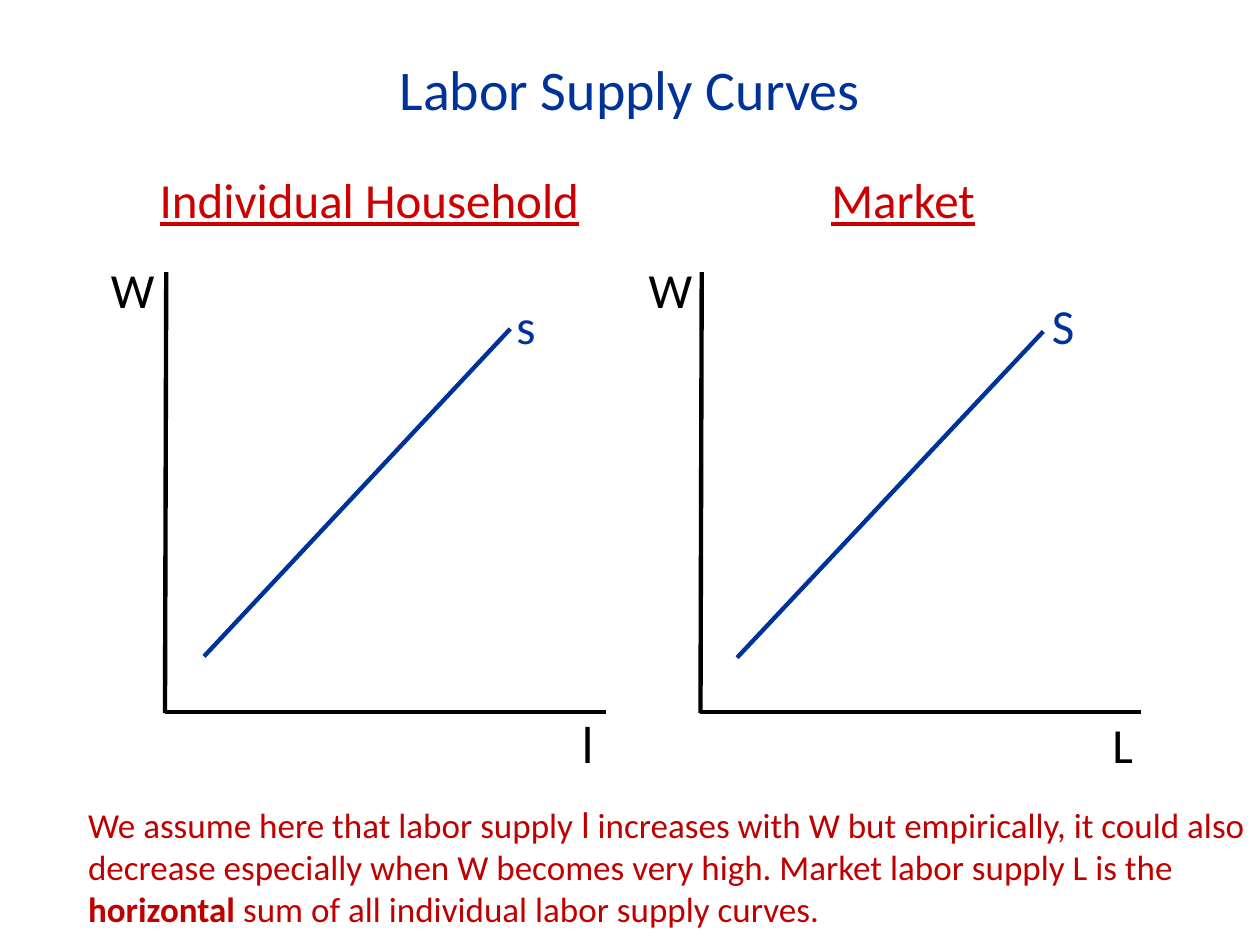
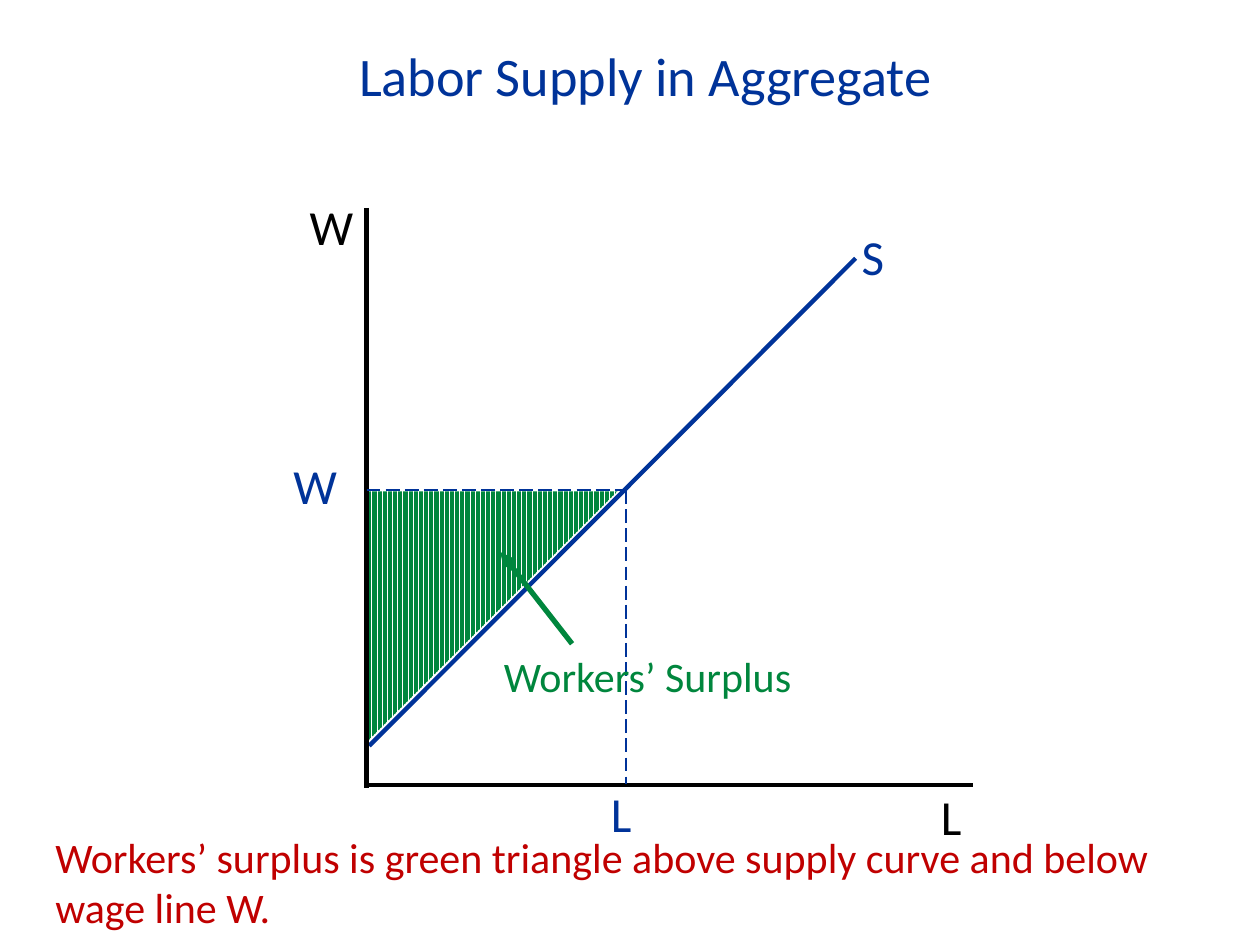
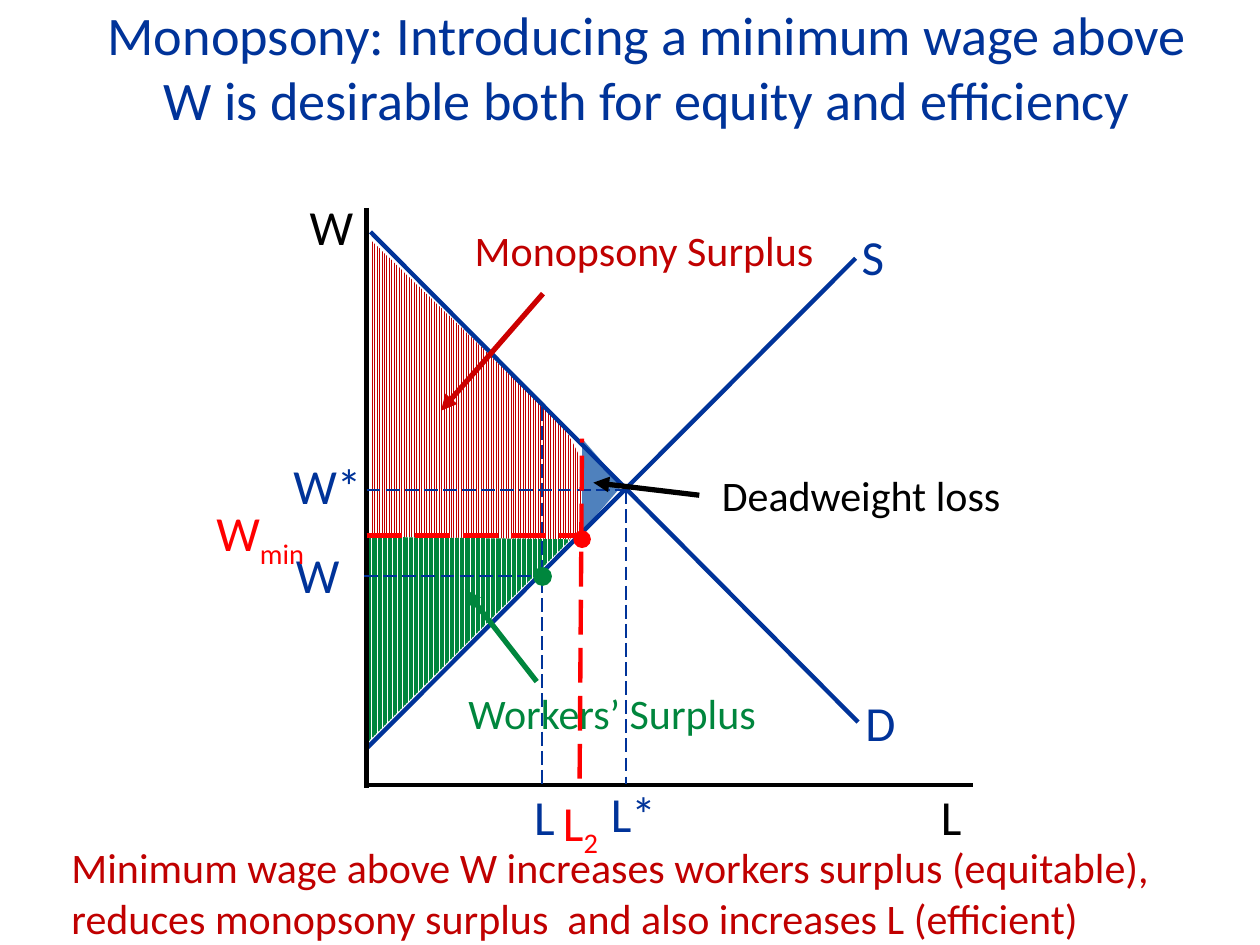
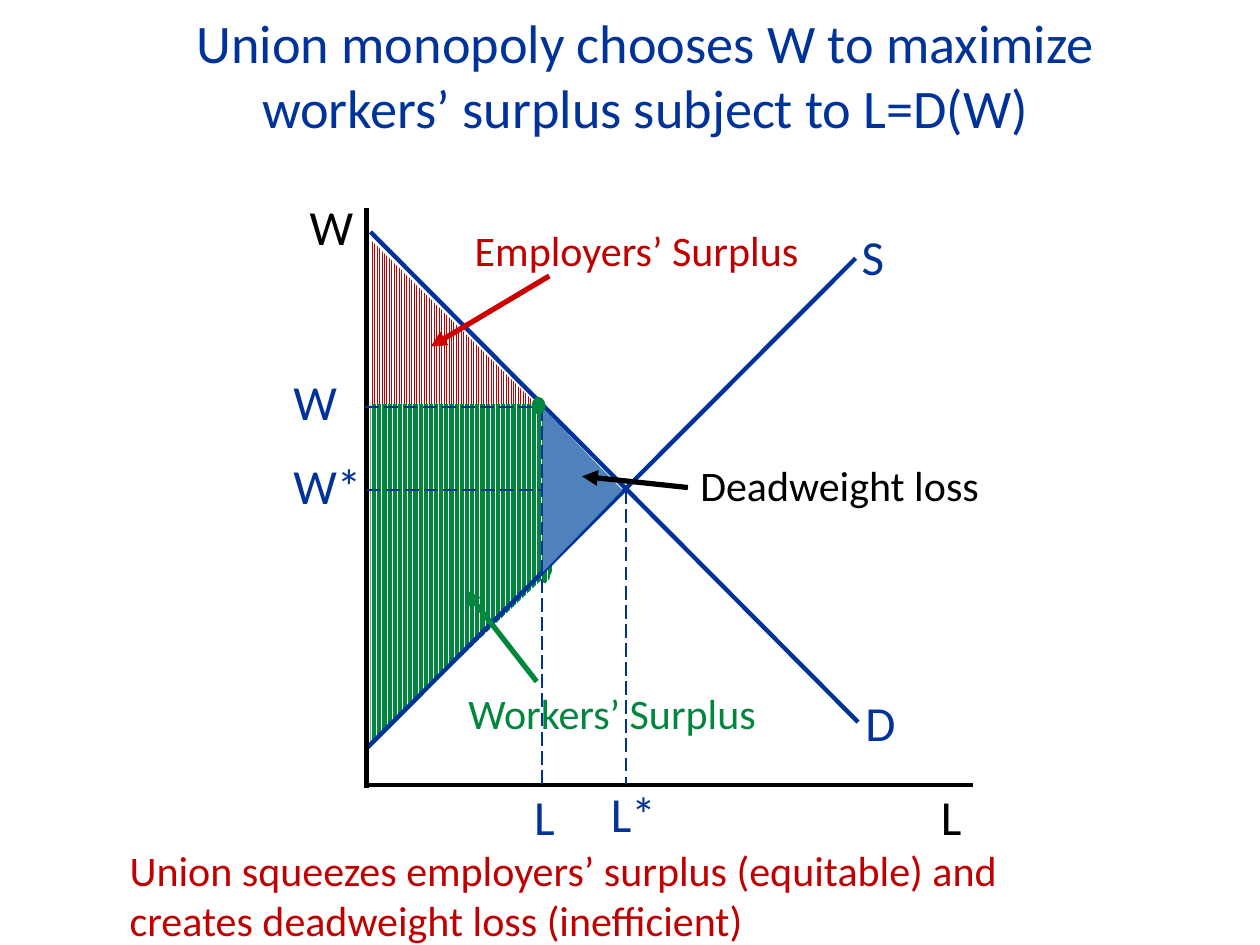
from pptx import Presentation
from pptx import util as u
from pptx.dml.color import RGBColor
from pptx.enum import dml, shapes, text
from pptx.oxml.ns import qn
from lxml import etree

BLACK, WHITE, BLUE = "000000", "FFFFFF", "003399"
RED, NOTE_RED, BRIGHT_RED = "CC0000", "C00000", "FF0000"
GREEN, LOSS_BLUE = "00863D", "4F81BD"
DARK, LIGHT = dml.MSO_PATTERN.DARK_VERTICAL, dml.MSO_PATTERN.LIGHT_VERTICAL

TEXT_STYLES = {
    "title": dict(size=31, color=BLUE, centred=True),
    "first title": dict(size=32, color=BLUE, centred=True),
    "heading": dict(size=28, color=RED, underline=True),
    "axis": dict(size=28, color=BLACK),
    "wage axis": dict(size=28, color=BLACK, spacing=0.8),
    "curve": dict(size=28, color=BLUE),
    "value": dict(size=28, color=BLUE, spacing=0.8),
    "minimum": dict(size=28, color=BRIGHT_RED, spacing=0.8),
    "note": dict(size=24, color=NOTE_RED),
    "small note": dict(size=20, color=NOTE_RED, wrap=False),
    "firm surplus": dict(size=24, color=NOTE_RED, wrap=False),
    "worker surplus": dict(size=24, color=GREEN),
    "loss": dict(size=24, color=BLACK, wrap=False),
}
LINE_STYLES = {
    "axis": dict(color=BLACK, width=2.5),
    "curve": dict(color=BLUE, width=2.5),
    "guide": dict(color=BLUE, width=1, dashed=True),
    "minimum": dict(color=BRIGHT_RED, width=2.5, dashed=True),
    "red arrow": dict(color=RED, width=3, arrow=True),
    "green arrow": dict(color=GREEN, width=3, arrow=True),
    "black arrow": dict(color=BLACK, width=3, arrow=True),
}
FILLS = {"workers": (GREEN, DARK), "firm": (NOTE_RED, LIGHT), "loss": (LOSS_BLUE, None),
         "red": (BRIGHT_RED, None), "green": (GREEN, None)}

PANELS = [
    dict(origin=94.3, quantity=[("l", "lato")], quantity_x=325.4, wage_x=56.2),
    dict(origin=400.3, quantity="L", quantity_x=628.6, wage_x=363.6),
]


def panel(origin, quantity, quantity_x, wage_x):
    return ("group", [
        ("line", "axis", (origin + 0.7, 155.5, origin, 407.5)),
        ("line", "axis", (origin, 406.8, origin + 252, 406.8)),
        ("label", "axis", (quantity_x, 404.6, 36.7, 41), [quantity]),
        ("label", "wage axis", (wage_x, 151.2, 32.4, 35.3), ["W"]),
    ])


SUPPLY = [("line", "curve", (209.5, 427.7, 488.9, 147.6))]
AXES = [
    ("line", "axis", (209.5, 118.8, 209.5, 450)),
    ("line", "axis", (210.2, 448.6, 555.8, 448.6)),
    ("label", "axis", (530.6, 445.7, 28.8, 36), ["L"]),
    ("label", "wage axis", (169.9, 115.2, 41.8, 34.6), ["W"]),
    ("label", "curve", (485.3, 126, 50.4, 41), ["S"]),
]


def wage(label, x, y):
    return ("label", "value", (x, y, 64.1, 35.3), [label])


def labor(label, x, y, style="value"):
    return ("label", style, (x, y, 54, 35.3), [label])


def equilibrium(mark=""):
    return [
        ("line", "guide", (209.5, 280.1, 357.1, 280.1)),
        ("line", "guide", (357.8, 280.1, 357.8, 447.8)),
        wage("W" + mark, 160.6, 263.5),
        labor("L" + mark, 342, 450.7),
    ]


def workers_surplus(x, y):
    return [
        ("label", "worker surplus", (x, y, 193, 36), ["Workers’ Surplus"]),
        ("line", "green arrow", (x + 46.1, y, x + 5.1, y - 52.5)),
    ]


MARKET = [
    ("label", "curve", (487.4, 392.4, 42.5, 41), ["D"]),
    *SUPPLY, *AXES,
    ("line", "curve", (211.7, 132.5, 490.3, 412.6)),
    *equilibrium("*"),
    *workers_surplus(260.6, 389.5),
]
CHOSEN_LABOR = [
    ("line", "guide", (309.6, 232.6, 309.6, 447.8)),
    labor("L", 298.1, 452.2),
]

SLIDES = [
    [
        ("label", "first title", (50.4, 27.4, 619.2, 46.1), ["Labor Supply Curves"]),
        *[panel(**p) for p in PANELS],
        ("label", "heading", (84.2, 93.6, 259.2, 74.9), ["Individual Household"]),
        ("label", "heading", (468, 93.6, 120.2, 41), ["Market"]),
        ("line", "curve", (421.2, 375.8, 596.2, 189.4)),
        ("label", "curve", (594, 165.6, 40.3, 41), ["S"]),
        ("line", "curve", (116.6, 375.1, 291.6, 187.9)),
        ("label", "curve", (288, 165.6, 40.3, 41), ["s"]),
        ("label", "small note", (43.2, 455.8, 682.6, 79.9), [
            [("We assume here that labor supply ", ""), ("l", "lato"),
             (" increases with W but empirically, it could also", "")],
            "decrease especially when W becomes very high. Market labor supply L is the",
            [("horizontal ", "bold"), ("sum of all individual labor supply curves.", "")],
        ]),
    ],
    [
        ("preset", "workers", "RIGHT_TRIANGLE", (210.2, 280.8, 142.6, 142.6), 90),
        ("line", "curve", (211, 426.2, 488.9, 147.6)),
        *AXES, *equilibrium(),
        ("label", "title", (59, 20.2, 619.2, 44.6), ["Labor Supply in Aggregate"]),
        ("label", "note", (24.5, 471.6, 677.5, 65.5),
         ["Workers’ surplus is green triangle above supply curve and below wage line W."]),
        *workers_surplus(280.8, 367.9)[::-1],
    ],
    [
        ("area", "firm", [(212.4, 340.6), (212.4, 137.5), (323.3, 244.8),
                          (338.4, 276.5, 349.9, 288, 331.2, 303.8),
                          (313.2, 319.7, 227.5, 373, 212.4, 340.6)]),
        ("area", "loss", [(332.6, 303.8), (332.6, 250.6), (355.7, 277.2)]),
        ("area", "workers", [(208.1, 306.7), (326.2, 308.2), (211, 423.4)]),
        *MARKET,
        ("line", "red arrow", (310.3, 167.8, 252, 234.7)),
        ("label", "firm surplus", (264.2, 124.6, 209.5, 36), ["Monopsony Surplus"]),
        ("label", "title", (38.9, -2.9, 661, 82.1),
         ["Monopsony: Introducing a minimum wage above W is desirable both for equity and efficiency"]),
        ("label", "note", (33.8, 477.4, 717.8, 65.5),
         ["Minimum wage above W increases workers surplus (equitable),",
          "reduces monopsony surplus  and also increases L (efficient)"]),
        *CHOSEN_LABOR,
        ("line", "guide", (208.1, 329, 309.6, 329)),
        wage("W", 162, 313.9),
        ("label", "loss", (405.4, 265, 175, 58.3), ["Deadweight loss"]),
        ("line", "black arrow", (399.6, 283, 339.1, 275.8)),
        ("line", "minimum", (209.5, 306, 332.6, 306)),
        ("label", "minimum", (116.6, 287.3, 96.5, 35.3), [[("W", ""), ("min", "sub")]]),
        ("line", "minimum", (331.2, 445, 332.6, 250.6)),
        labor([("L", ""), ("2", "sub")], 314.6, 452.9, "minimum"),
        ("preset", "red", "OVAL", (327.6, 303.1, 10.1, 10.1), 0),
        ("preset", "green", "OVAL", (304.6, 324, 10.8, 10.8), 0),
    ],
    [
        ("area", "workers", [(211.7, 424.8), (211.7, 232.6),
                             (213.8, 200.9, 218.2, 223.2, 234, 223.9),
                             (250.6, 225.4, 295.2, 218.9, 308.9, 234.7),
                             (323.3, 250.6, 320.4, 347, 308.9, 331.9)]),
        *MARKET,
        ("label", "firm surplus", (264.2, 124.6, 200.2, 36), ["Employers’ Surplus"]),
        ("label", "title", (59, 1.4, 619.2, 82.1),
         ["Union monopoly chooses W to maximize workers’ surplus subject to L=D(W)"]),
        ("label", "note", (67, 478.8, 717.8, 65.5),
         ["Union squeezes employers’ surplus (equitable) and",
          "creates deadweight loss (inefficient)"]),
        ("area", "loss", [(310.3, 326.9), (310.3, 233.3), (355.7, 280.1)]),
        *CHOSEN_LABOR,
        ("line", "guide", (208.8, 232.6, 311, 232.6)),
        wage("W", 160.6, 215.3),
        ("label", "loss", (393.1, 259.2, 175, 58.3), ["Deadweight loss"]),
        ("line", "black arrow", (393.1, 278.6, 332.6, 272.2)),
        ("preset", "firm", "RIGHT_TRIANGLE", (212.4, 137.5, 94.3, 93.6), 0),
        ("line", "red arrow", (313.9, 157.7, 246.2, 198)),
        ("preset", "green", "OVAL", (303.8, 226.8, 7.9, 10.1), 0),
    ],
]


def rgb(value):
    return RGBColor.from_string(value)


def pts(values):
    return [u.Pt(v) for v in values]


def add_label(tree, style, box, paragraphs):
    look = TEXT_STYLES[style]
    tf = tree.add_textbox(*pts(box)).text_frame
    tf.word_wrap = look.get("wrap", True)
    tf.auto_size = text.MSO_AUTO_SIZE.SHAPE_TO_FIT_TEXT
    if look.get("centred"):
        tf.vertical_anchor = text.MSO_ANCHOR.MIDDLE
    for i, runs in enumerate(paragraphs):
        p = tf.add_paragraph() if i else tf.paragraphs[0]
        p.font.name, p.font.size = "Calibri", u.Pt(look["size"])
        p.font.color.rgb = rgb(look["color"])
        p.font.underline = look.get("underline")
        p.line_spacing = look.get("spacing")
        if look.get("centred"):
            p.alignment = text.PP_ALIGN.CENTER
        for words, kind in [(runs, "")] if isinstance(runs, str) else runs:
            r = p.add_run()
            r.text = words
            if kind == "bold":
                r.font.bold = True
            elif kind == "lato":
                r.font.name = "Lato"
            elif kind == "sub":
                r.font._element.set("baseline", "-25000")


def add_line(tree, style, ends):
    look = LINE_STYLES[style]
    sp = tree.add_connector(shapes.MSO_CONNECTOR.STRAIGHT, *pts(ends))
    sp.line.color.rgb = rgb(look["color"])
    sp.line.width = u.Pt(look["width"])
    if look.get("dashed"):
        sp.line.dash_style = dml.MSO_LINE.LONG_DASH
    if look.get("arrow"):
        etree.SubElement(sp.line._get_or_add_ln(), qn("a:tailEnd"), type="triangle")
    etree.SubElement(sp._element.spPr, qn("a:effectLst"))


def paint(sp, fill):
    color, pattern = FILLS[fill]
    if pattern is None:
        sp.fill.solid()
        sp.fill.fore_color.rgb = rgb(color)
    else:
        sp.fill.patterned()
        sp.fill.pattern = pattern
        sp.fill.fore_color.rgb = rgb(color)
        sp.fill.back_color.rgb = rgb(WHITE)
    sp.line.fill.background()
    sp.shadow.inherit = False


def add_preset(tree, fill, kind, box, rotation):
    sp = tree.add_shape(getattr(shapes.MSO_SHAPE, kind), *pts(box))
    sp.rotation = rotation
    paint(sp, fill)


def flatten(segments, steps=12):
    points = []
    for segment in segments:
        if len(segment) == 2:
            points.append(segment)
            continue
        x0, y0 = points[-1]
        x1, y1, x2, y2, x3, y3 = segment
        for i in range(1, steps + 1):
            t = i / steps
            a, b, c, d = (1 - t) ** 3, 3 * t * (1 - t) ** 2, 3 * t * t * (1 - t), t ** 3
            points.append((a * x0 + b * x1 + c * x2 + d * x3,
                           a * y0 + b * y1 + c * y2 + d * y3))
    return points


def add_area(tree, fill, segments):
    start, *rest = [pts(point) for point in flatten(segments)]
    outline = tree.build_freeform(*start)
    outline.add_line_segments(rest, close=True)
    paint(outline.convert_to_shape(), fill)


def add_group(tree, parts):
    draw(tree.add_group_shape().shapes, parts)


DRAWERS = {"label": add_label, "line": add_line, "preset": add_preset,
           "area": add_area, "group": add_group}


def draw(tree, parts):
    for kind, *details in parts:
        DRAWERS[kind](tree, *details)


def main():
    prs = Presentation()
    prs.slide_width, prs.slide_height = pts((720, 540))
    for parts in SLIDES:
        s = prs.slides.add_slide(prs.slide_layouts[6])
        draw(s.shapes, parts)
    prs.save("out.pptx")


if __name__ == "__main__":
    main()
